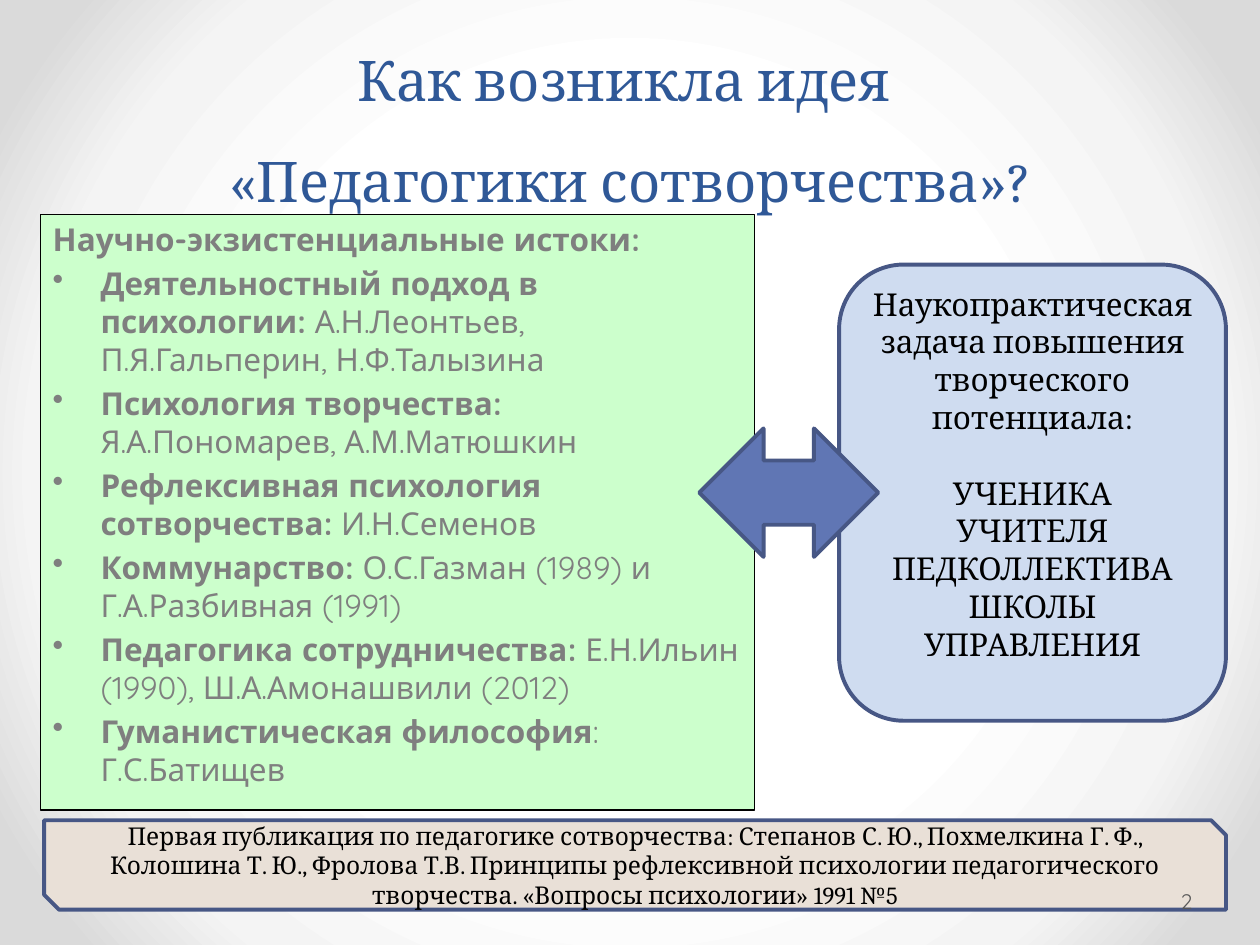
from dataclasses import dataclass

from lxml.etree import SubElement
from pptx import Presentation
from pptx.dml.color import RGBColor
from pptx.enum.shapes import MSO_SHAPE as Shape
from pptx.enum.text import MSO_ANCHOR as Anchor, MSO_AUTO_SIZE as AutoSize, PP_ALIGN as Align
from pptx.oxml.ns import qn
from pptx.util import Inches, Pt

COLUMNS, ROWS = 100, 75


@dataclass(frozen=True)
class Theme:
    serif: str = "Cambria"
    sans: str = "Quicksand"
    title: str = "2F5897"
    muted: str = "7F7F7F"
    number: str = "595959"
    ink: str = "000000"
    edge: str = "475785"
    arrow: str = "6076B4"
    origins: str = "CCFFCC"
    task: str = "CFDCF0"
    citation: str = "E9E0D7"
    backdrop: tuple = ((50, "FFFFFF"), (76, "F4F4F4"), (92, "DADADA"))
    title_size: int = 32
    body_size: int = 18
    citation_size: int = 14
    number_size: int = 12
    thin: float = 0.75
    thick: float = 2.25


THEME = Theme()

ORIGINS = (
    ("Деятельностный подход в психологии: ", "А.Н.Леонтьев, П.Я.Гальперин, Н.Ф.Талызина"),
    ("Психология творчества: ", "Я.А.Пономарев, А.М.Матюшкин"),
    ("Рефлексивная психология сотворчества: ", "И.Н.Семенов"),
    ("Коммунарство: ", "О.С.Газман (1989) и Г.А.Разбивная (1991)"),
    ("Педагогика сотрудничества: ", "Е.Н.Ильин (1990), Ш.А.Амонашвили (2012)"),
    ("Гуманистическая философия", ": Г.С.Батищев"),
)
TASK = "Наукопрактическая задача повышения творческого потенциала:"
LEVELS = ("УЧЕНИКА", "УЧИТЕЛЯ", "ПЕДКОЛЛЕКТИВА", "ШКОЛЫ", "УПРАВЛЕНИЯ")
CITATION = (
    "Первая публикация по педагогике сотворчества: Степанов С. Ю., Похмелкина Г. Ф., "
    "Колошина Т. Ю., Фролова Т.В. Принципы рефлексивной психологии педагогического "
    "творчества. «Вопросы психологии» 1991 №5"
)


def grid_box(deck, left, top, columns, rows):
    column, row = deck.slide_width / COLUMNS, deck.slide_height / ROWS
    return tuple(round(v) for v in (left * column, top * row, columns * column, rows * row))


def style(paragraph, face, size, color, align=Align.LEFT):
    paragraph.alignment = align
    paragraph.font.name = face
    paragraph.font.size = Pt(size)
    paragraph.font.color.rgb = RGBColor.from_string(color)


def add_panel(slide, box, outline, fill, edge, weight):
    panel = slide.shapes.add_shape(outline, *box)
    panel.shadow.inherit = False
    panel.fill.solid()
    panel.fill.fore_color.rgb = RGBColor.from_string(fill)
    panel.line.color.rgb = RGBColor.from_string(edge)
    panel.line.width = Pt(weight)
    panel.text_frame.word_wrap = True
    return panel


def add_bullet(paragraph, indent):
    properties = paragraph._p.get_or_add_pPr()
    properties.set("marL", str(indent))
    properties.set("indent", str(-indent))
    bullet = properties.makeelement(qn("a:buChar"), {"char": "•"})
    properties.insert_element_before(bullet, "a:tabLst", "a:defRPr", "a:extLst")


def paint_backdrop(slide):
    slide.background.fill.gradient()
    gradient = slide.element.find(".//" + qn("a:gradFill"))
    for part in list(gradient):
        gradient.remove(part)
    stops = SubElement(gradient, qn("a:gsLst"))
    for share, color in THEME.backdrop:
        stop = SubElement(stops, qn("a:gs"), pos=str(share * 1000))
        SubElement(stop, qn("a:srgbClr"), val=color)
    circle = SubElement(gradient, qn("a:path"), {"path": "circle"})
    SubElement(circle, qn("a:fillToRect"), {side: "50000" for side in "ltrb"})


def place_title(slide, box):
    title = slide.shapes.title
    title.left, title.top, title.width, title.height = box
    frame = title.text_frame
    frame.auto_size = AutoSize.NONE
    frame.vertical_anchor = Anchor.BOTTOM
    frame.text = "Как возникла идея \v«Педагогики сотворчества»?"
    heading = frame.paragraphs[0]
    style(heading, THEME.serif, THEME.title_size, THEME.title, Align.CENTER)
    heading.line_spacing = Pt(58)


def place_origins(slide, box):
    frame = add_panel(slide, box, Shape.RECTANGLE, THEME.origins, THEME.ink, THEME.thin).text_frame
    frame.vertical_anchor = Anchor.TOP
    for index, (strong, names) in enumerate((("Научно-экзистенциальные истоки:", ""), *ORIGINS)):
        paragraph = frame.add_paragraph() if index else frame.paragraphs[0]
        style(paragraph, THEME.sans, THEME.body_size, THEME.muted)
        paragraph.space_before = Pt(0.2 * THEME.body_size)
        lead = paragraph.add_run()
        lead.text = strong
        lead.font.bold = True
        if names:
            paragraph.add_run().text = names
            add_bullet(paragraph, Inches(0.38))


def place_task(slide, box):
    frame = add_panel(
        slide, box, Shape.ROUNDED_RECTANGLE, THEME.task, THEME.edge, THEME.thick
    ).text_frame
    frame.vertical_anchor = Anchor.MIDDLE
    blank_line = Pt(1.2 * THEME.body_size)
    frame.margin_bottom += blank_line
    frame.text = "\n".join((TASK, *LEVELS))
    for paragraph in frame.paragraphs:
        style(paragraph, THEME.serif, THEME.body_size, THEME.ink, Align.CENTER)
    frame.paragraphs[1].space_before = blank_line


def place_citation(slide, box):
    frame = add_panel(
        slide, box, Shape.SNIP_2_DIAG_RECTANGLE, THEME.citation, THEME.edge, THEME.thick
    ).text_frame
    frame.vertical_anchor = Anchor.MIDDLE
    frame.text = CITATION
    style(frame.paragraphs[0], THEME.serif, THEME.citation_size, THEME.ink, Align.CENTER)


def place_number(slide, box):
    frame = slide.shapes.add_textbox(*box).text_frame
    frame.word_wrap = True
    frame.vertical_anchor = Anchor.MIDDLE
    frame.margin_left, frame.margin_right = Inches(0.03), Inches(0.05)
    frame.text = "2"
    style(frame.paragraphs[0], THEME.sans, THEME.number_size, THEME.number)


def main():
    deck = Presentation()
    deck.slide_width, deck.slide_height = Inches(10), Inches(7.5)
    slide = deck.slides.add_slide(deck.slide_layouts[5])
    paint_backdrop(slide)
    place_title(slide, grid_box(deck, 5, 0, 90, 17.5))
    place_origins(slide, grid_box(deck, 3.2, 17, 56.7, 47.3))
    place_task(slide, grid_box(deck, 66.6, 21, 30.7, 36.2))
    add_panel(
        slide, grid_box(deck, 55.5, 34, 14.2, 10.2),
        Shape.LEFT_RIGHT_ARROW, THEME.arrow, THEME.edge, THEME.thick,
    )
    place_citation(slide, grid_box(deck, 3.5, 65.1, 93.8, 7.1))
    place_number(slide, grid_box(deck, 93.4, 69.5, 6.1, 4))
    deck.save("out.pptx")


if __name__ == "__main__":
    main()
